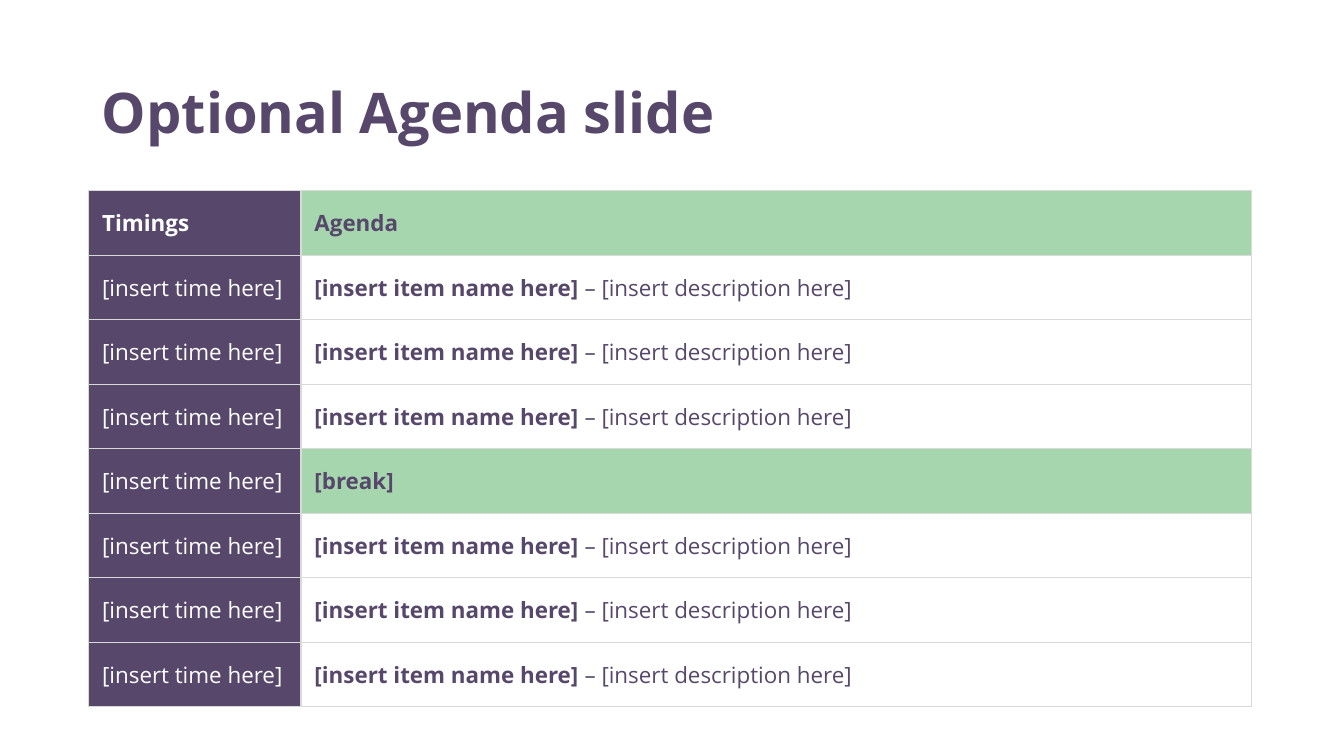
from lxml.etree import SubElement
from pptx import Presentation
from pptx.dml.color import RGBColor
from pptx.enum.text import MSO_ANCHOR
from pptx.oxml.ns import qn
from pptx.util import Inches, Pt

PURPLE = RGBColor(0x57, 0x48, 0x6B)
GREEN = RGBColor(0xA6, 0xD6, 0xAE)
WHITE = RGBColor(0xFF, 0xFF, 0xFF)
GREY = RGBColor(0xD9, 0xD9, 0xD9)
FONT = "Open Sans"

TITLE = "Optional Agenda slide"
TIME = "[insert time here]"
ITEM = ("[insert item name here]", " – [insert description here]")
# Each row: time, then the bold lead and any plain text after it
ROWS = [
    ("Timings", ("Agenda",)),
    *[(TIME, ITEM)] * 3,
    (TIME, ("[break]",)),
    *[(TIME, ITEM)] * 3,
]

SLIDE_WIDTH = 10
SLIDE_HEIGHT = SLIDE_WIDTH * 9 / 16
LEFT, WIDTH = 0.66, 8.65
TITLE_TOP, TITLE_HEIGHT = 0.49, 0.67
TABLE_TOP, ROW_HEIGHT = 1.42, 0.48
TIME_WIDTH = 1.58
INSET = Inches(0.1)


def set_margins(target):
    for side in ("left", "right", "top", "bottom"):
        setattr(target, f"margin_{side}", INSET)


def add_run(p, text, size, color, bold):
    r = p.add_run()
    r.text = text
    font = {"name": FONT, "size": Pt(size), "bold": bold}
    for name, value in font.items():
        setattr(r.font, name, value)
    r.font.color.rgb = color


def add_borders(cell):
    """Draw all four cell edges; they must precede the fill in the XML."""
    tc_pr = cell._tc.get_or_add_tcPr()
    for i, edge in enumerate(("lnL", "lnR", "lnT", "lnB")):
        line = SubElement(tc_pr, qn(f"a:{edge}"), w=str(Pt(0.75)))
        fill = SubElement(line, qn("a:solidFill"))
        SubElement(fill, qn("a:srgbClr"), val=str(GREY))
        tc_pr.insert(i, line)


def fill_cell(cell, texts, color, bolds, fill):
    cell.vertical_anchor = MSO_ANCHOR.MIDDLE
    set_margins(cell)
    if fill is None:
        cell.fill.background()
    else:
        cell.fill.solid()
        cell.fill.fore_color.rgb = fill
    add_borders(cell)
    for text, bold in zip(texts, bolds):
        add_run(cell.text_frame.paragraphs[0], text, 12, color, bold)


prs = Presentation()
prs.slide_width, prs.slide_height = Inches(SLIDE_WIDTH), Inches(SLIDE_HEIGHT)
s = prs.slides.add_slide(prs.slide_layouts[6])

title = s.shapes.add_textbox(Inches(LEFT), Inches(TITLE_TOP),
                             Inches(WIDTH), Inches(TITLE_HEIGHT))
tf = title.text_frame
tf.word_wrap = True
tf.vertical_anchor = MSO_ANCHOR.MIDDLE
set_margins(tf)
add_run(tf.paragraphs[0], TITLE, 30, PURPLE, True)

table = s.shapes.add_table(len(ROWS), 2, Inches(LEFT), Inches(TABLE_TOP),
                           Inches(WIDTH), Inches(ROW_HEIGHT * len(ROWS))).table
table.first_row = table.horz_banding = False
for column, width in zip(table.columns, (TIME_WIDTH, WIDTH - TIME_WIDTH)):
    column.width = Inches(width)

for i, (time, agenda) in enumerate(ROWS):
    table.rows[i].height = Inches(ROW_HEIGHT)
    fill_cell(table.cell(i, 0), (time,), WHITE, (i == 0,), PURPLE)
    fill_cell(table.cell(i, 1), agenda, PURPLE, (True, False),
              None if agenda == ITEM else GREEN)

prs.save("out.pptx")
